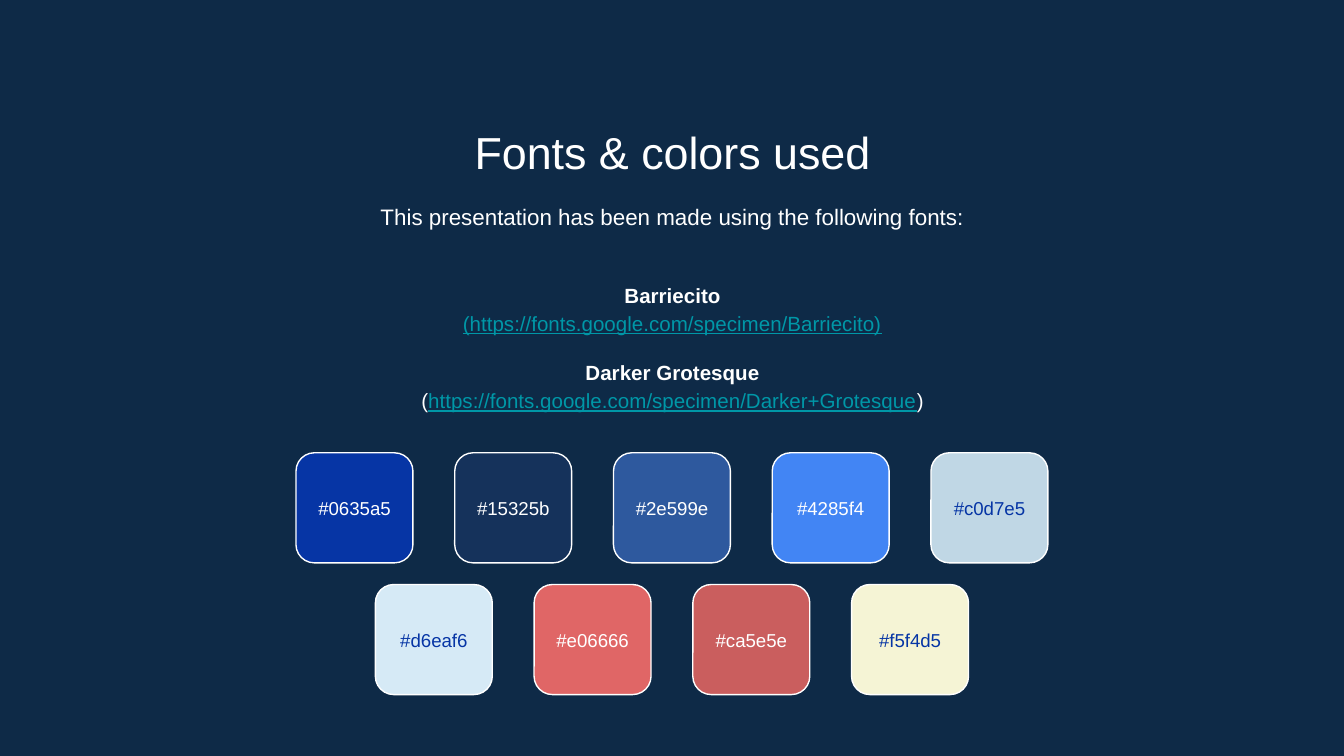
from dataclasses import dataclass

from lxml import etree
from pptx import Presentation
from pptx.dml.color import RGBColor
from pptx.enum.shapes import MSO_SHAPE
from pptx.enum.text import MSO_ANCHOR, PP_ALIGN
from pptx.oxml.ns import qn
from pptx.util import Cm, Pt

CENTER = PP_ALIGN.CENTER
TOP, MIDDLE = MSO_ANCHOR.TOP, MSO_ANCHOR.MIDDLE
ROUNDED = MSO_SHAPE.ROUNDED_RECTANGLE
TWO_CONTENT_LAYOUT = 3
SLIDE_WIDTH, SLIDE_HEIGHT = 25.4, 14.29


@dataclass(frozen=True)
class Theme:
    font: str = "Arial"
    background: str = "0E2A47"
    light: str = "FFFFFF"
    dark: str = "0635A5"
    link: str = "0097A7"
    title_size: float = 24
    intro_size: float = 12
    list_size: float = 11
    label_size: float = 10
    outline: float = 0.75


class SlideBuilder:
    """Holds the theme and the slide being filled."""

    def __init__(self, slide, theme):
        self.slide = slide
        self.theme = theme
        fill = slide.background.fill
        fill.solid()
        fill.fore_color.rgb = RGBColor.from_string(theme.background)

    def fill_text(self, text_frame, paragraphs, size, anchor, spacing=1.0):
        """Fill a frame; each paragraph is (space before, [(text, format), ...])."""
        inset = Cm(0.25)
        frame_format = {"word_wrap": True, "vertical_anchor": anchor,
                        "margin_left": inset, "margin_right": inset,
                        "margin_top": inset, "margin_bottom": inset}
        for name, value in frame_format.items():
            setattr(text_frame, name, value)
        for index, (space_before, runs) in enumerate(paragraphs):
            paragraph = text_frame.add_paragraph() if index else text_frame.paragraphs[0]
            paragraph_format = {"alignment": CENTER, "line_spacing": spacing,
                                "space_before": Pt(space_before), "space_after": Pt(0)}
            for name, value in paragraph_format.items():
                setattr(paragraph, name, value)
            properties = paragraph._p.get_or_add_pPr()
            properties.set("marL", "0")
            properties.set("indent", "0")
            etree.SubElement(properties, qn("a:buNone"))
            for text, changes in runs:
                run_format = {"name": self.theme.font, "size": Pt(size),
                              "bold": False, "underline": False,
                              "color": self.theme.light, **changes}
                color = run_format.pop("color")
                run = paragraph.add_run()
                run.text = text
                for name, value in run_format.items():
                    setattr(run.font, name, value)
                run.font.color.rgb = RGBColor.from_string(color)

    def placeholder(self, index, box, paragraphs, size, anchor=TOP, spacing=1.0):
        shape = self.slide.placeholders[index]
        for name, value in zip(("left", "top", "width", "height"), box):
            setattr(shape, name, Cm(value))
        self.fill_text(shape.text_frame, paragraphs, size, anchor, spacing)

    def swatch(self, left, top, width, height, fill, text_color):
        """A rounded tile grouped with its colour code."""
        group = self.slide.shapes.add_group_shape()
        tile = group.shapes.add_shape(ROUNDED, Cm(left), Cm(top), Cm(width), Cm(height))
        tile.shadow.inherit = False
        tile.fill.solid()
        tile.fill.fore_color.rgb = RGBColor.from_string(fill.upper())
        tile.line.color.rgb = RGBColor.from_string(self.theme.light)
        tile.line.width = Pt(self.theme.outline)
        label_height = 1.22
        label = group.shapes.add_textbox(Cm(left), Cm(top + (height - label_height) / 2),
                                         Cm(width), Cm(label_height))
        self.fill_text(label.text_frame, [(0, [("#" + fill, {"color": text_color})])],
                       self.theme.label_size, MIDDLE)

    def swatch_row(self, top, swatches):
        """A row of tiles at an equal pitch, centred on the slide."""
        width, height, pitch = 2.21, 2.08, 3.0
        first = (SLIDE_WIDTH - pitch * (len(swatches) - 1) - width) / 2
        for column, (fill, text_color) in enumerate(swatches):
            self.swatch(first + column * pitch, top, width, height, fill, text_color)


def main():
    presentation = Presentation()
    presentation.slide_width = Cm(SLIDE_WIDTH)
    presentation.slide_height = Cm(SLIDE_HEIGHT)
    theme = Theme()
    layout = presentation.slide_layouts[TWO_CONTENT_LAYOUT]
    builder = SlideBuilder(presentation.slides.add_slide(layout), theme)

    # Title and introduction
    left, width = 2.92, 19.58
    builder.placeholder(0, (left, 2.11, width, 1.35),
                        [(0, [("Fonts & colors used", {})])], theme.title_size)
    intro = "This presentation has been made using the following fonts:"
    builder.placeholder(1, (left, 3.51, width, 1.22),
                        [(0, [(intro, {})])], theme.intro_size, spacing=1.15)

    # Font names with their addresses
    bold = {"bold": True}
    link = {"color": theme.link, "underline": True}
    fonts = [
        (0, [("Barriecito", bold)]),
        (0, [("(https://fonts.google.com/specimen/Barriecito)", link)]),
        (11, [("Darker Grotesque", bold)]),
        (0, [("(", {}),
             ("https://fonts.google.com/specimen/Darker+Grotesque", link),
             (")", {})]),
    ]
    builder.placeholder(2, (left, 4.8, width, 3.48), fonts, theme.list_size, MIDDLE, 1.15)

    # Colour palette
    light, dark = theme.light, theme.dark
    builder.swatch_row(8.56, [("0635a5", light), ("15325b", light), ("2e599e", light),
                              ("4285f4", light), ("c0d7e5", dark)])
    builder.swatch_row(11.05, [("d6eaf6", dark), ("e06666", light),
                               ("ca5e5e", light), ("f5f4d5", dark)])

    presentation.save("out.pptx")


if __name__ == "__main__":
    main()
